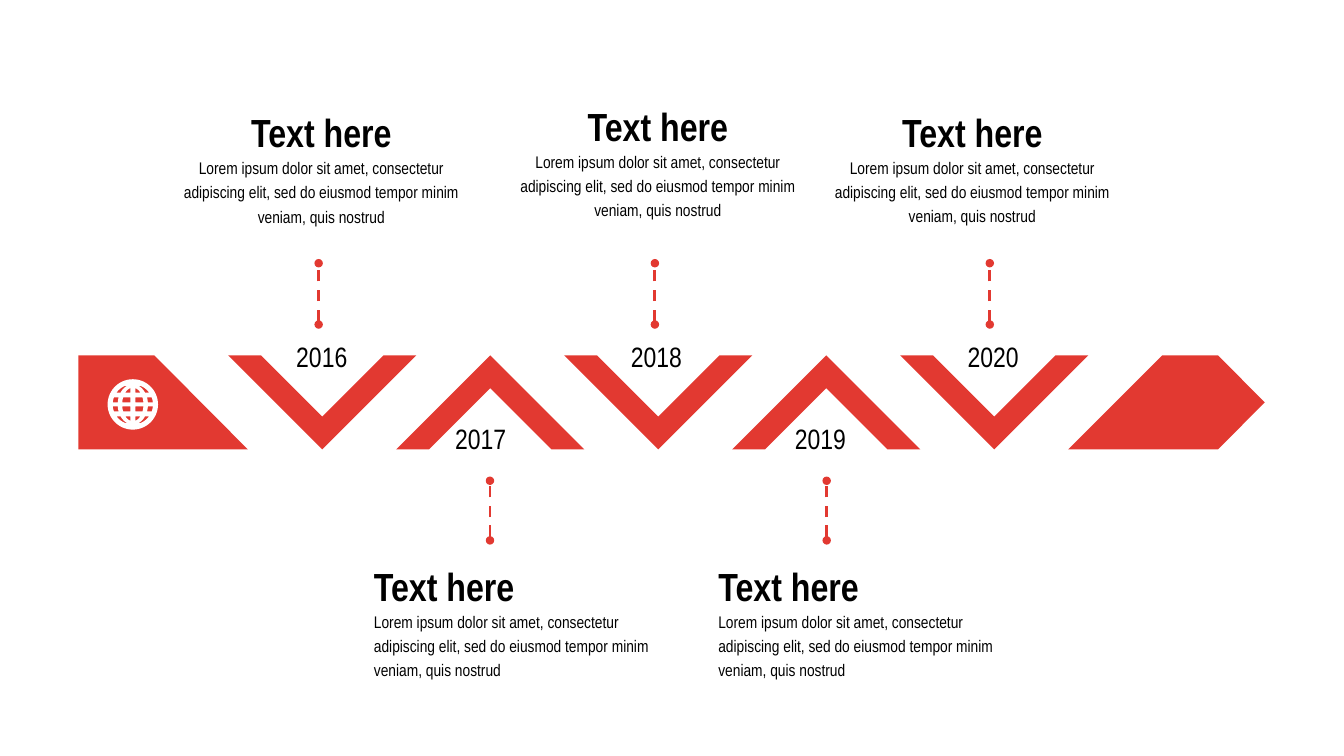
"""Build a five-year zigzag timeline slide."""
from itertools import product
from math import cos, pi, sin, sqrt

from lxml.etree import SubElement
from pptx import Presentation
from pptx.dml.color import RGBColor
from pptx.enum.dml import MSO_LINE_DASH_STYLE as Dash
from pptx.enum.shapes import MSO_CONNECTOR as Connector
from pptx.enum.text import PP_ALIGN as Align
from pptx.oxml.ns import qn
from pptx.util import Pt

COLORS = {"red": "E23931", "white": "FFFFFF", "black": "000000"}
FONT = "Arial Narrow"
HEADING = "Text here"
BODY = ("Lorem ipsum dolor sit amet, consectetur adipiscing elit, "
        "sed do eiusmod tempor minim veniam, quis nostrud")
MILESTONES = [
    {"year": "2016", "year_left": 204.5, "stem": 227.6, "left": 121, "top": 74},
    {"year": "2017", "year_left": 318, "stem": 350, "left": 260, "top": 398},
    {"year": "2018", "year_left": 443.5, "stem": 467.8, "left": 361.4, "top": 69.6},
    {"year": "2019", "year_left": 560.6, "stem": 590.5, "left": 506, "top": 398},
    {"year": "2020", "year_left": 684, "stem": 707, "left": 586, "top": 73.6},
]

BAND_LEFT, BAND_TOP, BAND_HEIGHT = 56, 253.8, 67.2
FIRST_CHEVRON, PITCH, THICKNESS = 163, 120, 23.4
ABOVE = {"year_top": 239, "stem": (231.8, 188), "align": Align.CENTER}
BELOW = {"year_top": 297.4, "stem": (386, 343.4), "align": Align.LEFT}
TEXT_WIDTH, HEADING_HEIGHT, BODY_HEIGHT = 217, 32.4, 44
GLOBE_X, GLOBE_Y, GLOBE_RADIUS = 94.9, 288.9, 18

deck = Presentation()
deck.slide_width, deck.slide_height = Pt(960), Pt(540)
slide = deck.slides.add_slide(deck.slide_layouts[6])


def color(name):
    return RGBColor.from_string(COLORS[name])


def add_text(text, left, top, width, height, size=12, bold=False,
             align=Align.LEFT, spacing=1.0, wrap=True):
    frame = slide.shapes.add_textbox(Pt(left), Pt(top), Pt(width), Pt(height)).text_frame
    frame.word_wrap = wrap
    line = frame.paragraphs[0]
    line.alignment, line.line_spacing = align, spacing
    run = line.add_run()
    run.text = text
    run.font.name, run.font.size, run.font.bold = FONT, Pt(size), bold
    run.font.color.rgb = color("black")


def add_outline(contours, fill):
    outline, *holes = [[(Pt(x), Pt(y)) for x, y in contour] for contour in contours]
    builder = slide.shapes.build_freeform(*outline[0])
    builder.add_line_segments(outline[1:])
    for hole in holes:
        builder.move_to(*hole[0])
        builder.add_line_segments(hole[1:])
    shape = builder.convert_to_shape()
    shape.shadow.inherit = False
    shape.fill.solid()
    shape.fill.fore_color.rgb = color(fill)
    shape.line.fill.background()


def add_stem(x, start, end):
    stem = slide.shapes.add_connector(Connector.STRAIGHT, Pt(x), Pt(start), Pt(x), Pt(end))
    stem.line.color.rgb = color("red")
    stem.line.width = Pt(0)
    stem.line.dash_style = Dash.DASH
    outline = stem.line._get_or_add_ln()
    for tag in ("a:headEnd", "a:tailEnd"):
        SubElement(outline, qn(tag), type="oval")
    SubElement(stem._element.spPr, qn("a:effectLst"))


def add_chevron(left, points_down):
    half = BAND_HEIGHT
    profile = [(0, 0), (THICKNESS, 0), (half, half - THICKNESS),
               (2 * half - THICKNESS, 0), (2 * half, 0), (half, half)]
    add_outline([[(left + x, BAND_TOP + (y if points_down else half - y))
                  for x, y in profile]], "red")


def arc(radius, height):
    return lambda y: radius * sqrt(1 - (y / height) ** 2)


def globe_contours():
    rim = [(GLOBE_RADIUS * cos(pi * k / 30), GLOBE_RADIUS * sin(pi * k / 30))
           for k in range(60)]
    columns = [(lambda y: 1.8, arc(7.6, 12), 11.6),
               (arc(10.8, 14.4), arc(14.4, 14.4), 13.3)]
    contours = [rim]
    for (inner, outer, tip), side, flip in product(columns, (-1, 1), (-1, 1)):
        for low, high in ((1.5, 5), (8.5, tip)):
            steps = [low + (high - low) * k / 6 for k in range(7)]
            cell = [(inner(y), y) for y in steps] + [(outer(y), y) for y in reversed(steps)]
            contours.append([(side * x, flip * y) for x, y in cell])
    return [[(GLOBE_X + x, GLOBE_Y + y) for x, y in contour] for contour in contours]


def main():
    bottom = BAND_TOP + BAND_HEIGHT
    middle = BAND_TOP + BAND_HEIGHT / 2
    add_outline([[(BAND_LEFT, BAND_TOP), (BAND_LEFT, bottom),
                  (177, bottom), (110.2, BAND_TOP)]], "red")
    add_outline(globe_contours(), "white")
    for index, milestone in enumerate(MILESTONES):
        above = index % 2 == 0
        side = ABOVE if above else BELOW
        left, top = milestone["left"], milestone["top"]
        add_chevron(FIRST_CHEVRON + index * PITCH, above)
        add_text(milestone["year"], milestone["year_left"], side["year_top"],
                 51, 46, size=20, wrap=False)
        add_stem(milestone["stem"], *side["stem"])
        add_text(HEADING, left, top, TEXT_WIDTH, HEADING_HEIGHT,
                 size=28, bold=True, align=side["align"])
        add_text(BODY, left, top + HEADING_HEIGHT, TEXT_WIDTH, BODY_HEIGHT,
                 align=side["align"], spacing=1.2)
    arrow_left = FIRST_CHEVRON + len(MILESTONES) * PITCH
    add_outline([[(arrow_left, bottom), (arrow_left + BAND_HEIGHT, BAND_TOP),
                  (870, BAND_TOP), (903.4, middle), (870, bottom)]], "red")
    deck.save("out.pptx")


if __name__ == "__main__":
    main()
